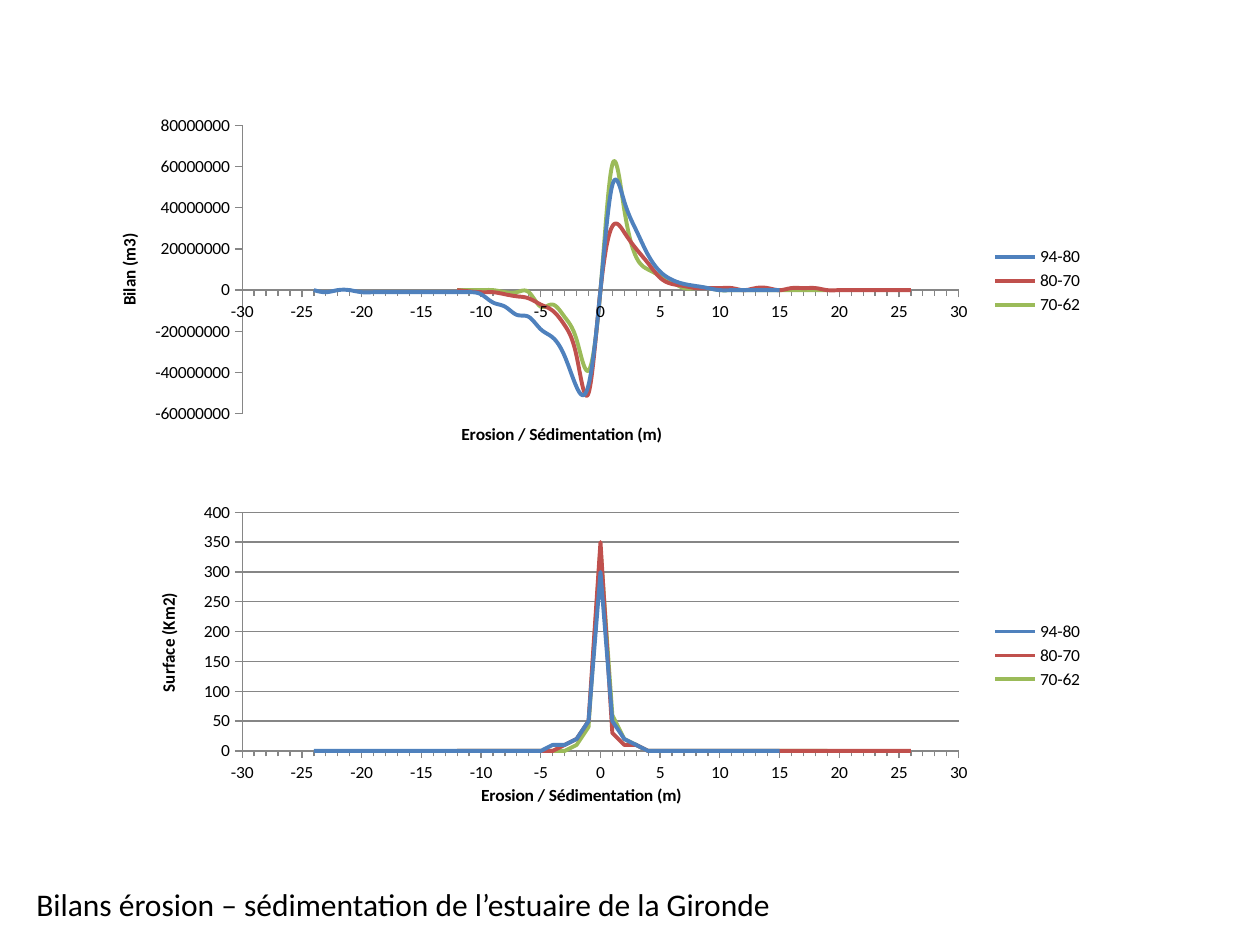
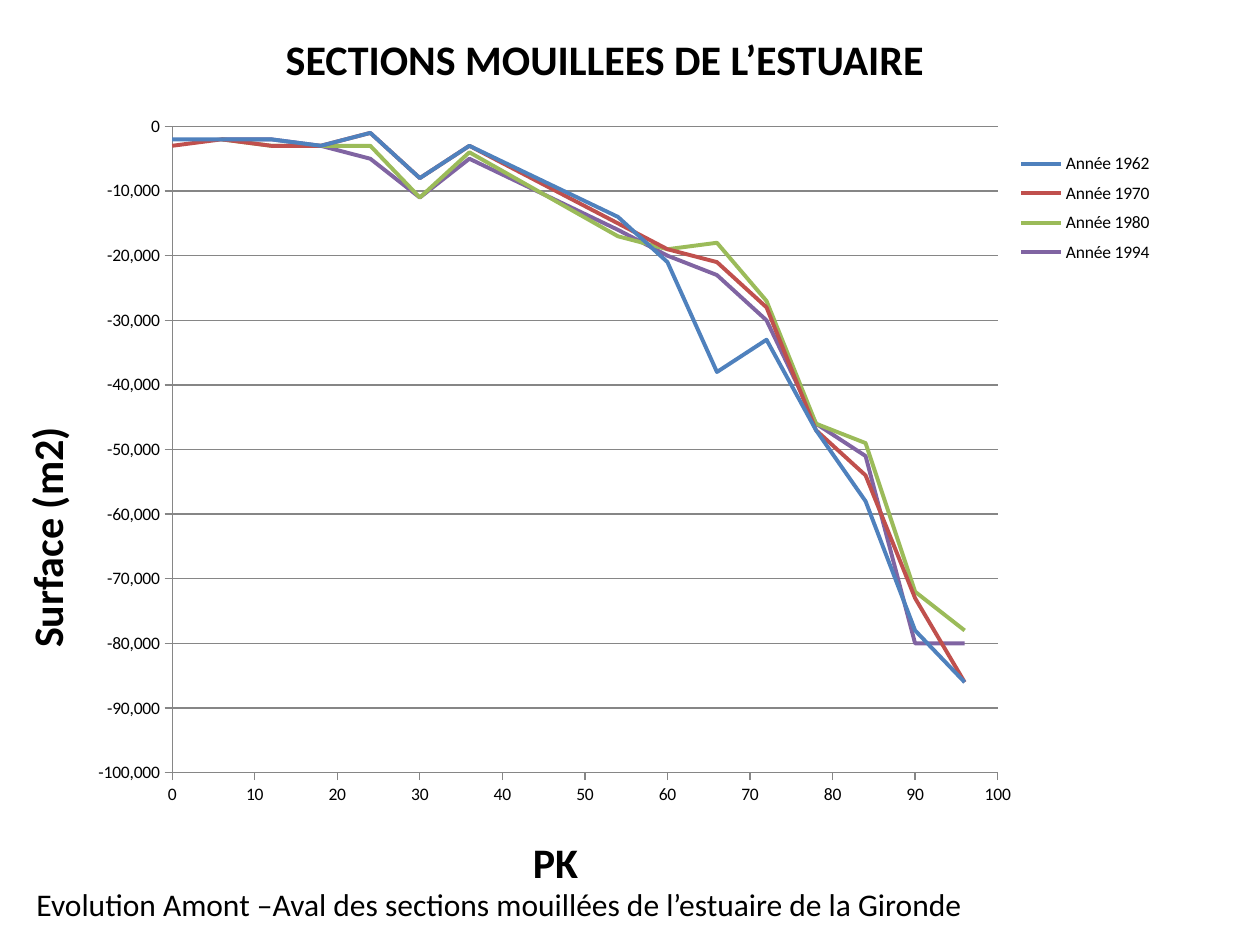
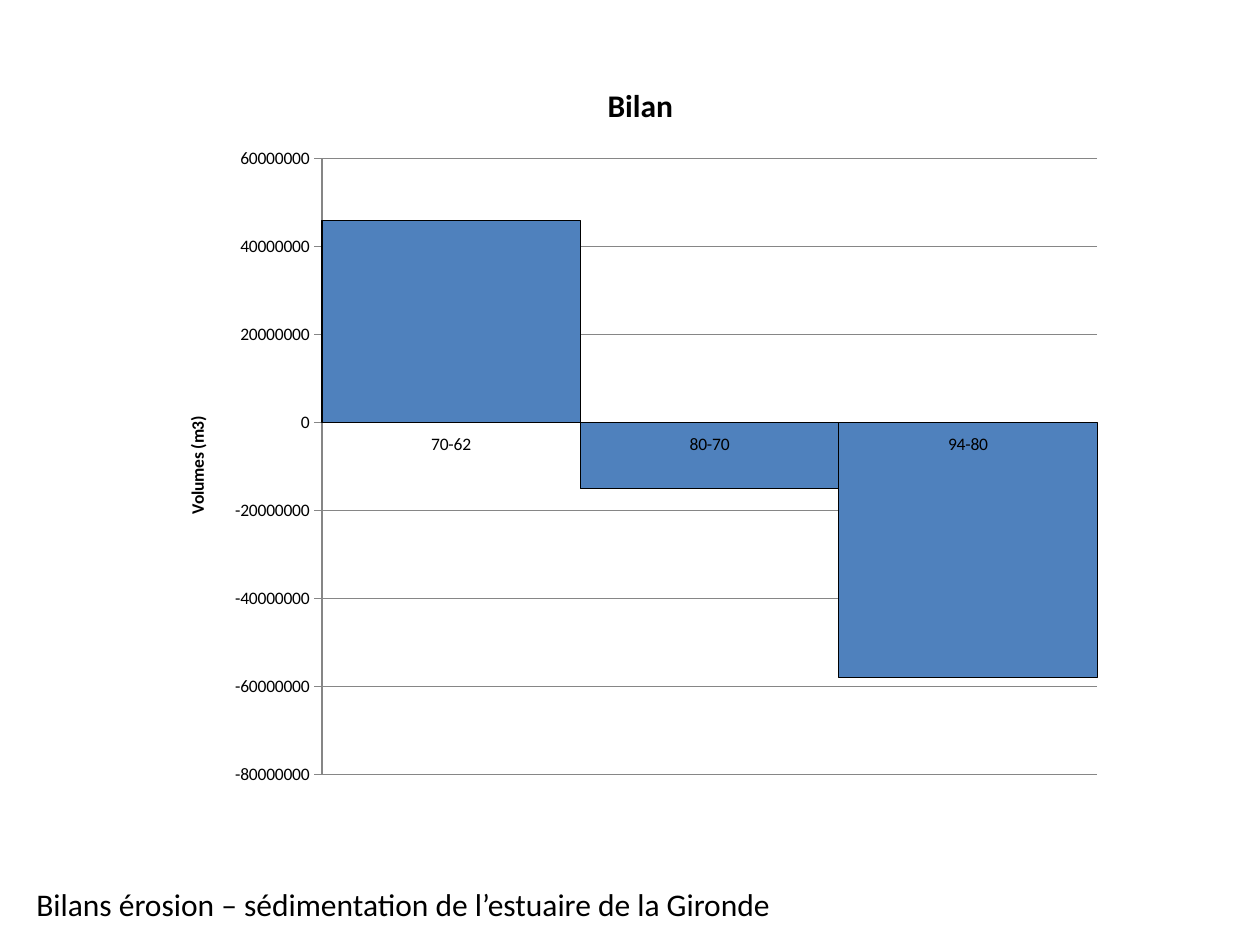
from dataclasses import dataclass
from typing import Any, Iterable, NamedTuple, Optional

from lxml import etree
from pptx import Presentation
from pptx.chart.data import CategoryChartData, XyChartData
from pptx.dml.color import RGBColor
from pptx.enum.chart import XL_AXIS_CROSSES, XL_CHART_TYPE, XL_LEGEND_POSITION, XL_TICK_MARK
from pptx.enum.text import MSO_AUTO_SIZE
from pptx.oxml.ns import qn
from pptx.util import Pt

COLUMNS = XL_CHART_TYPE.COLUMN_CLUSTERED
STRAIGHT = XL_CHART_TYPE.XY_SCATTER_LINES_NO_MARKERS
SMOOTH = XL_CHART_TYPE.XY_SCATTER_SMOOTH_NO_MARKERS
AT_MINIMUM = XL_AXIS_CROSSES.MINIMUM
AT_ZERO = XL_AXIS_CROSSES.AUTOMATIC
LEGEND_RIGHT = XL_LEGEND_POSITION.RIGHT
TICK_OUTSIDE = XL_TICK_MARK.OUTSIDE
TICK_NONE = XL_TICK_MARK.NONE
FIT_SHAPE = MSO_AUTO_SIZE.SHAPE_TO_FIT_TEXT


@dataclass(frozen=True)
class Theme:
    """Fonts, sizes and colours shared by the slides."""

    font: str = "Calibri"
    chart_size: float = 10
    caption_size: float = 18
    heading_size: float = 24
    line_width: float = 2.25
    axis_width: float = 0.75
    text: RGBColor = RGBColor(0x00, 0x00, 0x00)
    axis: RGBColor = RGBColor(0x86, 0x86, 0x86)
    series: tuple[RGBColor, ...] = (
        RGBColor(0x4F, 0x81, 0xBD),
        RGBColor(0xC0, 0x50, 0x4D),
        RGBColor(0x9B, 0xBB, 0x59),
        RGBColor(0x80, 0x64, 0xA2),
    )


THEME = Theme()


class Box(NamedTuple):
    """Position and size in points."""

    left: float
    top: float
    width: float
    height: float


class Curve(NamedTuple):
    """A named list of points, where a missing value is None."""

    name: str
    points: list[tuple[int, Optional[int]]]


@dataclass(frozen=True)
class AxisStyle:
    """Scale, title and marks of one axis."""

    minimum: Optional[float] = None
    maximum: Optional[float] = None
    major: Optional[float] = None
    minor: Optional[float] = None
    title: str = ""
    title_at: tuple[float, float] = (0, 0)
    vertical: bool = False
    grid: bool = False
    number_format: str = "General"
    crosses: Any = AT_ZERO


@dataclass(frozen=True)
class ChartStyle:
    """Place, kind and axes of one chart."""

    box: Box
    kind: Any
    plot: tuple[float, ...]
    horizontal: AxisStyle
    vertical: AxisStyle
    legend: bool = True
    legend_at: tuple[float, ...] = ()
    title: str = ""
    title_at: tuple[float, float] = (0, 0)


CAPTION_BOX = Box(13.7, 502.2, 567.4, 28.8)
BALANCE_CAPTION = "Bilans érosion – sédimentation de l’estuaire de la Gironde"
SECTION_CAPTION = "Evolution Amont –Aval des sections mouillées de l’estuaire de la Gironde"
DEPTH_TITLE = "Erosion / Sédimentation (m)"
MILLION = 1_000_000

DEPTHS = {
    "94-80": [*range(-24, 13), 15],
    "80-70": [-12, *range(-10, 27)],
    "70-62": [*range(-12, 20)],
}
SURFACES = {
    "94-80": (-4, [10, 10, 20, 50, 300, 50, 20, 10]),
    "80-70": (-3, [10, 20, 50, 350, 30, 10, 10]),
    "70-62": (-2, [10, 40, 340, 60, 20, 10]),
}
VOLUMES = {
    "94-80": (-23, [-1, 0, 0, -1, -1, -1, -1, -1, -1, -1, -1, -1, -1, -2, -6, -8, -12, -13, -19,
                    -23, -32, -47, -46, 0, 51, 43, 29, 17, 9, 5, 3, 2, 1]),
    "80-70": (-10, [-1, -1, -2, -3, -4, -7, -10, -17, -32, -50, 0, 31, 28, 20, 13, 6, 3, 2, 1,
                    1, 1, 1, 0, 1, 1, 0, 1, 1, 1]),
    "70-62": (-8, [-1, -1, -1, -8, -7, -13, -24, -39, 0, 61, 39, 16, 10, 7, 4, 1, 1, 1]),
}
KILOMETRE_POINTS = [*range(0, 37, 6), *range(54, 97, 6)]
SECTIONS = {
    "Année 1962": [-2, -2, -2, -3, -1, -8, -3, -14, -21, -38, -33, -47, -58, -78, -86],
    "Année 1970": [-3, -2, -3, -3, -1, -8, -3, -15, -19, -21, -28, -47, -54, -73, -86],
    "Année 1980": [None, -2, -3, -3, -3, -11, -4, -17, -19, -18, -27, -46, -49, -72, -78],
    "Année 1994": [None, -2, -2, -3, -5, -11, -5, -16, -20, -23, -30, -46, -51, -80, -80],
}
BALANCES = {"70-62": 46, "80-70": -15, "94-80": -58}

SURFACE_CHART = ChartStyle(
    Box(65.5, 287.3, 560.9, 175.7), STRAIGHT, (0.13, 0.02, 0.73, 0.8),
    AxisStyle(-30, 30, 5, 1, DEPTH_TITLE, (0.37, 0.92), crosses=AT_MINIMUM),
    AxisStyle(0, 400, 50, title="Surface (Km2)", title_at=(0.04, 0.29), vertical=True, grid=True),
)
VOLUME_CHART = ChartStyle(
    Box(65.5, 66.2, 560.9, 190.8), SMOOTH, (0.13, 0.02, 0.73, 0.89),
    AxisStyle(-30, 30, 5, 1, DEPTH_TITLE, (0.35, 0.93), crosses=AT_MINIMUM),
    AxisStyle(-60 * MILLION, 80 * MILLION, 20 * MILLION, title="Bilan (m3)",
              title_at=(0, 0.35), vertical=True, number_format="0"),
)
SECTION_CHART = ChartStyle(
    Box(44.6, 66.2, 625.7, 405.4), STRAIGHT, (0.086, 0.015, 0.754, 0.911),
    AxisStyle(0, 100, 10),
    AxisStyle(-100_000, 0, 10_000, vertical=True, grid=True, number_format="#,##0",
              crosses=AT_MINIMUM),
    legend_at=(0.84, 0.04, 0.16, 0.18),
)
BALANCE_CHART = ChartStyle(
    Box(93.6, 31.7, 544.3, 425.5), COLUMNS, (0.166, 0.139, 0.814, 0.827),
    AxisStyle(),
    AxisStyle(-80 * MILLION, 60 * MILLION, 20 * MILLION, title="Volumes (m3)",
              title_at=(0.02, 0.48), vertical=True, grid=True, number_format="0"),
    legend=False, title="Bilan", title_at=(0.46, 0.03),
)


def depth_curves(table: dict[str, tuple[int, list[int]]], unit: int) -> list[Curve]:
    """Place each run of values on its depths, with zero elsewhere."""
    curves = []
    for name, (first, values) in table.items():
        known = dict(enumerate(values, first))
        curves.append(Curve(name, [(depth, known.get(depth, 0) * unit) for depth in DEPTHS[name]]))
    return curves


def section_curves() -> list[Curve]:
    """Pair each section with its kilometre point."""
    return [
        Curve(name, [(point, None if value is None else value * 1000)
                     for point, value in zip(KILOMETRE_POINTS, values)])
        for name, values in SECTIONS.items()
    ]


def scatter_data(curves: Iterable[Curve]) -> XyChartData:
    """Turn curves into chart data."""
    data = XyChartData()
    for curve in curves:
        series = data.add_series(curve.name)
        for x, y in curve.points:
            series.add_data_point(x, y)
    return data


def balance_data() -> CategoryChartData:
    """Give the balance of each period as chart data."""
    data = CategoryChartData(number_format="0")
    data.categories = list(BALANCES)
    data.add_series("Bilan", [value * MILLION for value in BALANCES.values()])
    return data


def style_font(font: Any, size: float, bold: bool = False) -> None:
    """Apply the theme font."""
    font.name = THEME.font
    font.size = Pt(size)
    font.bold = bold
    font.color.rgb = THEME.text


def write(text_frame: Any, text: str, size: float, bold: bool) -> None:
    """Set a single-run text and format it."""
    text_frame.text = text
    style_font(text_frame.paragraphs[0].runs[0].font, size, bold)


def add_text(slide: Any, box: Box, text: str, size: float, bold: bool = False,
             rotation: float = 0) -> None:
    """Add a one-line text box."""
    shape = slide.shapes.add_textbox(*map(Pt, box))
    shape.rotation = rotation
    shape.text_frame.word_wrap = True
    shape.text_frame.auto_size = FIT_SHAPE
    write(shape.text_frame, text, size, bold)


def set_layout(parent: Any, index: int, place: Iterable[float], inner: bool = False) -> None:
    """Fix the place of a chart part as fractions of the chart."""
    for old in parent.findall(qn("c:layout")):
        parent.remove(old)
    layout = etree.Element(qn("c:layout"))
    manual = etree.SubElement(layout, qn("c:manualLayout"))
    settings = [("layoutTarget", "inner")] if inner else []
    settings += [("xMode", "edge"), ("yMode", "edge")]
    settings += [(name, str(value)) for name, value in zip("xywh", place)]
    for name, value in settings:
        etree.SubElement(manual, qn(f"c:{name}")).set("val", value)
    parent.insert(index, layout)


def style_line(line: Any, color: RGBColor, width: float) -> None:
    """Set the colour and width of a line."""
    line.color.rgb = color
    line.width = Pt(width)


def style_axis(axis: Any, style: AxisStyle) -> None:
    """Apply scale, marks and title to an axis."""
    axis.minimum_scale = style.minimum
    axis.maximum_scale = style.maximum
    if style.major:
        axis.major_unit = style.major
    if style.minor:
        axis.minor_unit = style.minor
    axis.crosses = style.crosses
    axis.major_tick_mark = TICK_OUTSIDE
    axis.minor_tick_mark = TICK_OUTSIDE if style.minor else TICK_NONE
    axis.tick_labels.number_format = style.number_format
    axis.tick_labels.number_format_is_linked = False
    style_line(axis.format.line, THEME.axis, THEME.axis_width)
    axis.has_major_gridlines = style.grid
    if style.grid:
        style_line(axis.major_gridlines.format.line, THEME.axis, THEME.axis_width)
    axis.has_title = bool(style.title)
    if style.title:
        title = axis.axis_title
        write(title.text_frame, style.title, THEME.chart_size, True)
        if style.vertical:
            title.text_frame._txBody.bodyPr.set("rot", "-5400000")
            title.text_frame._txBody.bodyPr.set("vert", "horz")
        set_layout(title._element, 1, style.title_at)


def drop_missing_points(series: Any) -> None:
    """Remove the cached points that have no value."""
    for point in list(series._element.iter(qn("c:pt"))):
        if point.findtext(qn("c:v")) == "None":
            point.getparent().remove(point)


def style_series(chart: Any, kind: Any) -> None:
    """Colour the columns or curves."""
    plot = chart.plots[0]
    plot.vary_by_categories = False
    if kind == COLUMNS:
        plot.gap_width = 0
        plot.overlap = 100
    for series, color in zip(plot.series, THEME.series):
        if kind == COLUMNS:
            series.invert_if_negative = False
            series.format.fill.solid()
            series.format.fill.fore_color.rgb = color
            style_line(series.format.line, THEME.text, THEME.axis_width)
        else:
            drop_missing_points(series)
            series._element.get_or_add_smooth().val = kind == SMOOTH
            style_line(series.format.line, color, THEME.line_width)


def add_chart(slide: Any, style: ChartStyle, data: Any) -> None:
    """Add a chart in the shared style."""
    chart = slide.shapes.add_chart(style.kind, *map(Pt, style.box), data).chart
    style_font(chart.font, THEME.chart_size)
    chart.has_title = bool(style.title)
    if style.title:
        write(chart.chart_title.text_frame, style.title, THEME.caption_size, True)
        set_layout(chart.chart_title._element, 1, style.title_at)
    chart.has_legend = style.legend
    if style.legend:
        chart.legend.position = LEGEND_RIGHT
        chart.legend.include_in_layout = False
        style_font(chart.legend.font, THEME.chart_size)
        if style.legend_at:
            set_layout(chart.legend._element, 1, style.legend_at)
    style_axis(chart.category_axis, style.horizontal)
    style_axis(chart.value_axis, style.vertical)
    style_series(chart, style.kind)
    set_layout(chart._chartSpace.chart.plotArea, 0, style.plot, inner=True)


def add_slide(presentation: Any, caption: str) -> Any:
    """Add a blank slide with its caption."""
    slide = presentation.slides.add_slide(presentation.slide_layouts[6])
    add_text(slide, CAPTION_BOX, caption, THEME.caption_size)
    return slide


def main() -> None:
    """Build the three slides."""
    presentation = Presentation()
    presentation.slide_width = Pt(720)
    presentation.slide_height = Pt(540)

    depth_slide = add_slide(presentation, BALANCE_CAPTION)
    add_chart(depth_slide, SURFACE_CHART, scatter_data(depth_curves(SURFACES, 1)))
    add_chart(depth_slide, VOLUME_CHART, scatter_data(depth_curves(VOLUMES, MILLION)))

    section_slide = add_slide(presentation, SECTION_CAPTION)
    add_chart(section_slide, SECTION_CHART, scatter_data(section_curves()))
    for box, text, rotation in (
        (Box(297.4, 474.5, 181.4, 36), "PK", 0),
        (Box(-64.1, 268.6, 181.4, 36), "Surface (m2)", 270),
        (Box(156.2, 15.5, 402.5, 36), "SECTIONS MOUILLEES DE L’ESTUAIRE", 0),
    ):
        add_text(section_slide, box, text, THEME.heading_size, True, rotation)

    balance_slide = add_slide(presentation, BALANCE_CAPTION)
    add_chart(balance_slide, BALANCE_CHART, balance_data())
    presentation.save("out.pptx")


if __name__ == "__main__":
    main()
